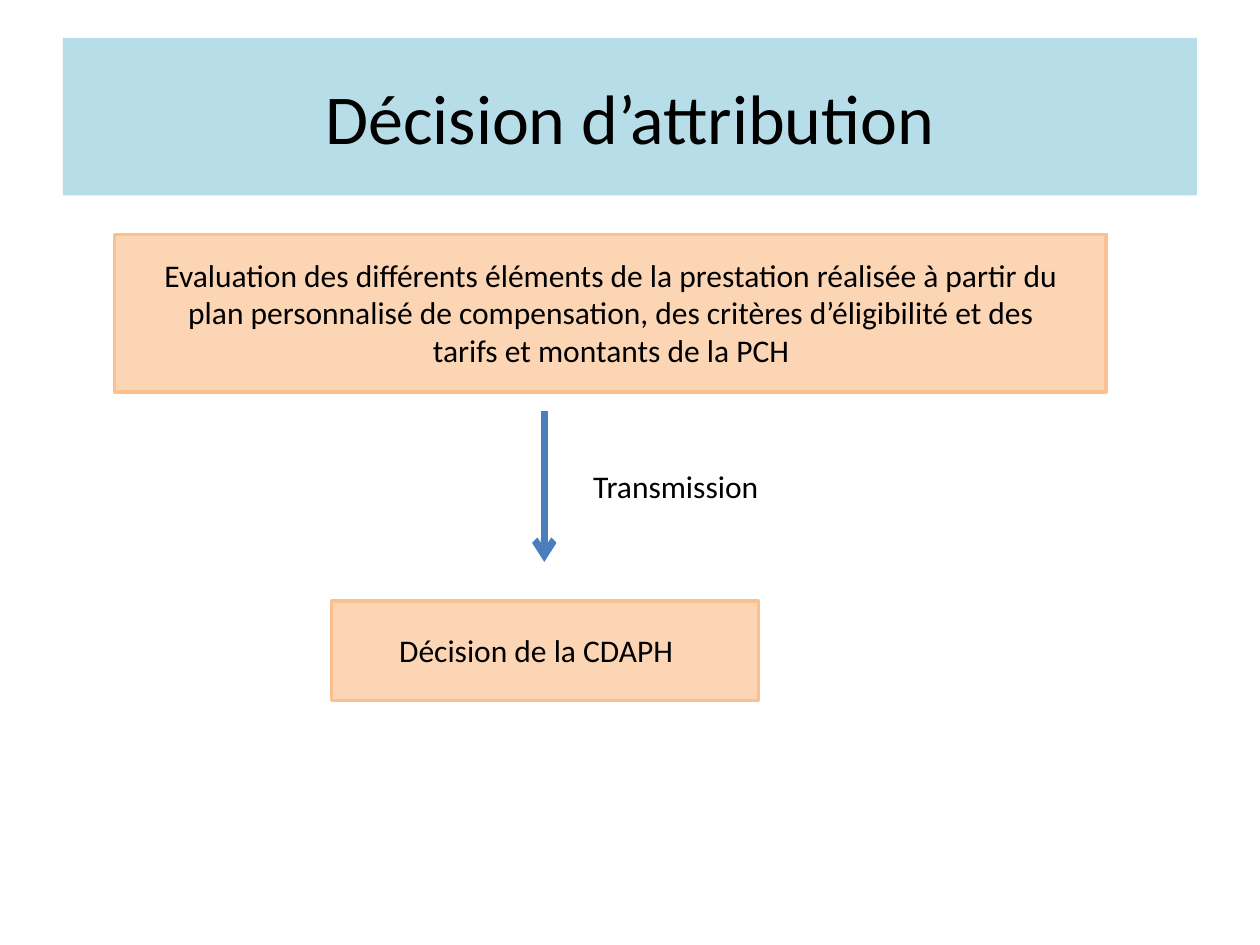
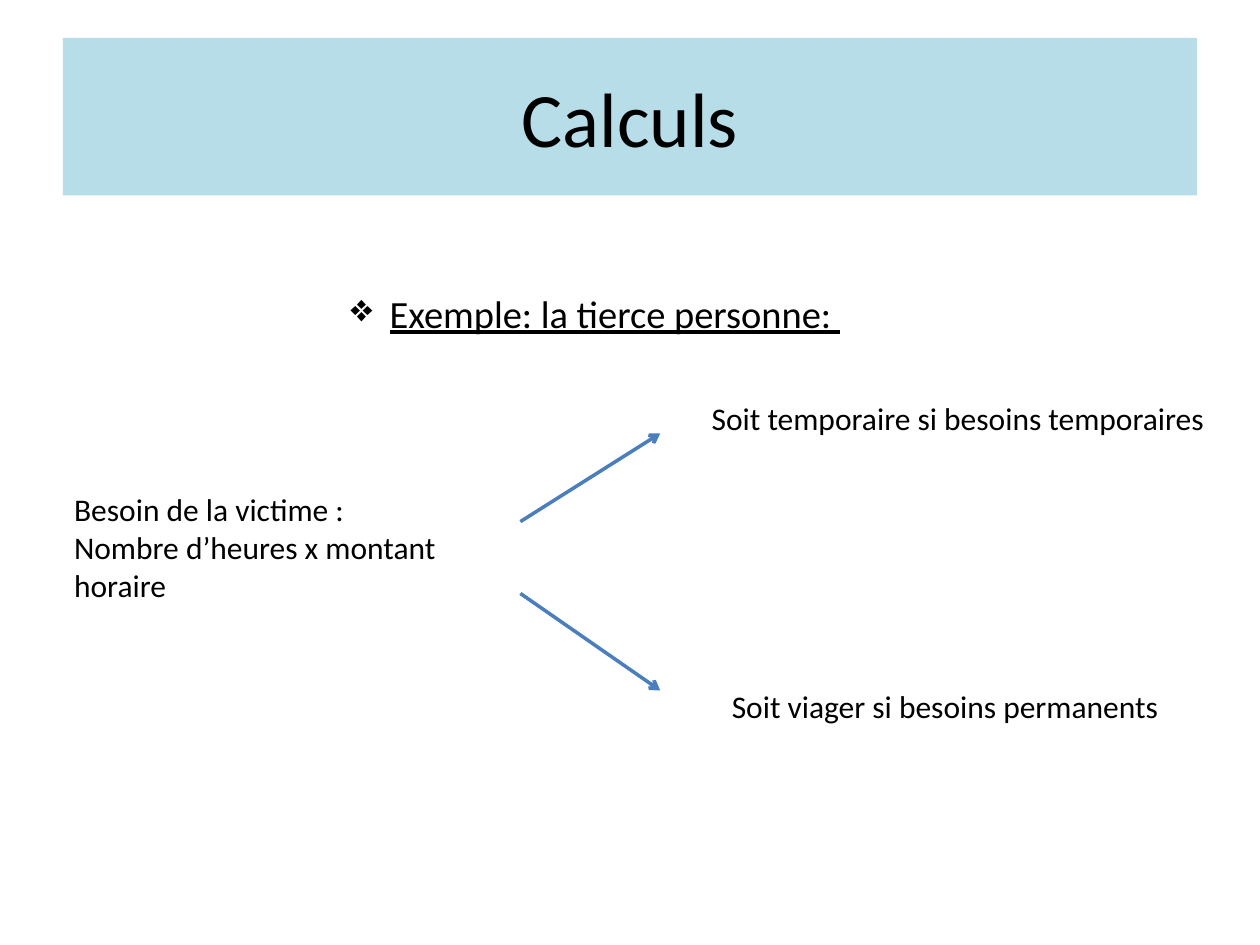
"""Build two slides on the award decision and its calculation."""
import pptx
import pptx.util
import pptx.dml.color
import pptx.enum.shapes
import pptx.enum.text
import pptx.oxml
import pptx.oxml.ns

Inches = pptx.util.Inches
Pt = pptx.util.Pt
RGBColor = pptx.dml.color.RGBColor
ALIGN = pptx.enum.text.PP_ALIGN
ANCHOR = pptx.enum.text.MSO_ANCHOR

FONT = "Calibri"
BLACK = RGBColor(0x00, 0x00, 0x00)
BAND = RGBColor(0xB7, 0xDE, 0xE8)
PEACH = RGBColor(0xFC, 0xD5, 0xB5)
ORANGE = RGBColor(0xFA, 0xC0, 0x90)
BLUE = RGBColor(0x4B, 0x7E, 0xBC)


def write(frame, text, size, align):
    frame.word_wrap = True
    frame.text = text
    for para in frame.paragraphs:
        para.alignment = align
        for run in para.runs:
            run.font.name = FONT
            run.font.size = Pt(size)
            run.font.color.rgb = BLACK


def add_box(slide, at, fill, edge=None):
    kind = pptx.enum.shapes.MSO_SHAPE.RECTANGLE
    box = slide.shapes.add_shape(kind, *map(Inches, at))
    box.shadow.inherit = False
    box.fill.solid()
    box.fill.fore_color.rgb = fill
    if edge is None:
        box.line.fill.background()
    else:
        box.line.color.rgb = edge
        box.line.width = Pt(2)
    return box


def add_title(slide, text, size):
    band = add_box(slide, (0.5, 0.3, 9, 1.25), BAND)
    write(band.text_frame, text, size, ALIGN.CENTER)
    band.text_frame.vertical_anchor = ANCHOR.MIDDLE


def add_text(slide, at, text, size=18, align=ALIGN.LEFT):
    box = slide.shapes.add_textbox(*map(Inches, at))
    write(box.text_frame, text, size, align)
    return box.text_frame


def add_bullet(para, mark, indent):
    props = para._p.get_or_add_pPr()
    props.set("marL", str(Inches(indent)))
    props.set("indent", str(-Inches(indent)))
    node = pptx.oxml.parse_xml(
        f'<a:buChar {pptx.oxml.ns.nsdecls("a")} char="{mark}"/>')
    props.append(node)


def add_arrow(slide, start, end, width):
    kind = pptx.enum.shapes.MSO_CONNECTOR.STRAIGHT
    arrow = slide.shapes.add_connector(kind, *map(Inches, start + end))
    arrow.line.color.rgb = BLUE
    arrow.line.width = Pt(width)
    names = pptx.oxml.ns.nsdecls("a")
    tip = pptx.oxml.parse_xml(f'<a:tailEnd {names} type="arrow"/>')
    arrow.line._get_or_add_ln().append(tip)
    flat = pptx.oxml.parse_xml(f"<a:effectLst {names}/>")
    arrow._element.spPr.append(flat)


def draw_award(slide):
    add_title(slide, "Décision d’attribution", 40)
    add_box(slide, (0.91, 1.86, 7.87, 1.25), PEACH, ORANGE)
    add_text(slide, (1.15, 1.98, 7.4, 1.01),
             "Evaluation des différents éléments de la prestation réalisée "
             "à partir du plan personnalisé de compensation, des critères "
             "d’éligibilité et des tarifs et montants de la PCH",
             align=ALIGN.CENTER)
    add_arrow(slide, (4.32, 3.26), (4.32, 4.46), 4)
    add_box(slide, (2.63, 4.77, 3.39, 0.79), PEACH, ORANGE)
    add_text(slide, (3.07, 4.96, 2.52, 0.4), "Décision de la CDAPH")
    add_text(slide, (4.61, 3.66, 2.36, 0.4), "Transmission")


def draw_sums(slide):
    add_title(slide, "Calculs", 44)
    frame = add_text(slide, (0.67, 2.25, 8.11, 0.47),
                     "Exemple: la tierce personne: ", 22, ALIGN.CENTER)
    head = frame.paragraphs[0]
    head.runs[0].font.underline = True
    add_bullet(head, "❖", 0.31)
    add_text(slide, (0.49, 3.84, 3.54, 1.01),
             "Besoin de la victime :\nNombre d’heures x montant horaire")
    add_text(slide, (5.55, 3.12, 4.17, 0.4),
             "Soit temporaire si besoins temporaires")
    add_text(slide, (5.71, 5.4, 4.17, 0.4),
             "Soit viager si besoins permanents")
    for top, tip in ((4.14, 3.44), (4.71, 5.48)):
        add_arrow(slide, (4.13, top), (5.24, tip), 2)


def main():
    deck = pptx.Presentation()
    deck.slide_width = Inches(10)
    deck.slide_height = Inches(7.5)
    for draw in (draw_award, draw_sums):
        draw(deck.slides.add_slide(deck.slide_layouts[6]))
    deck.save("out.pptx")


if __name__ == "__main__":
    main()
